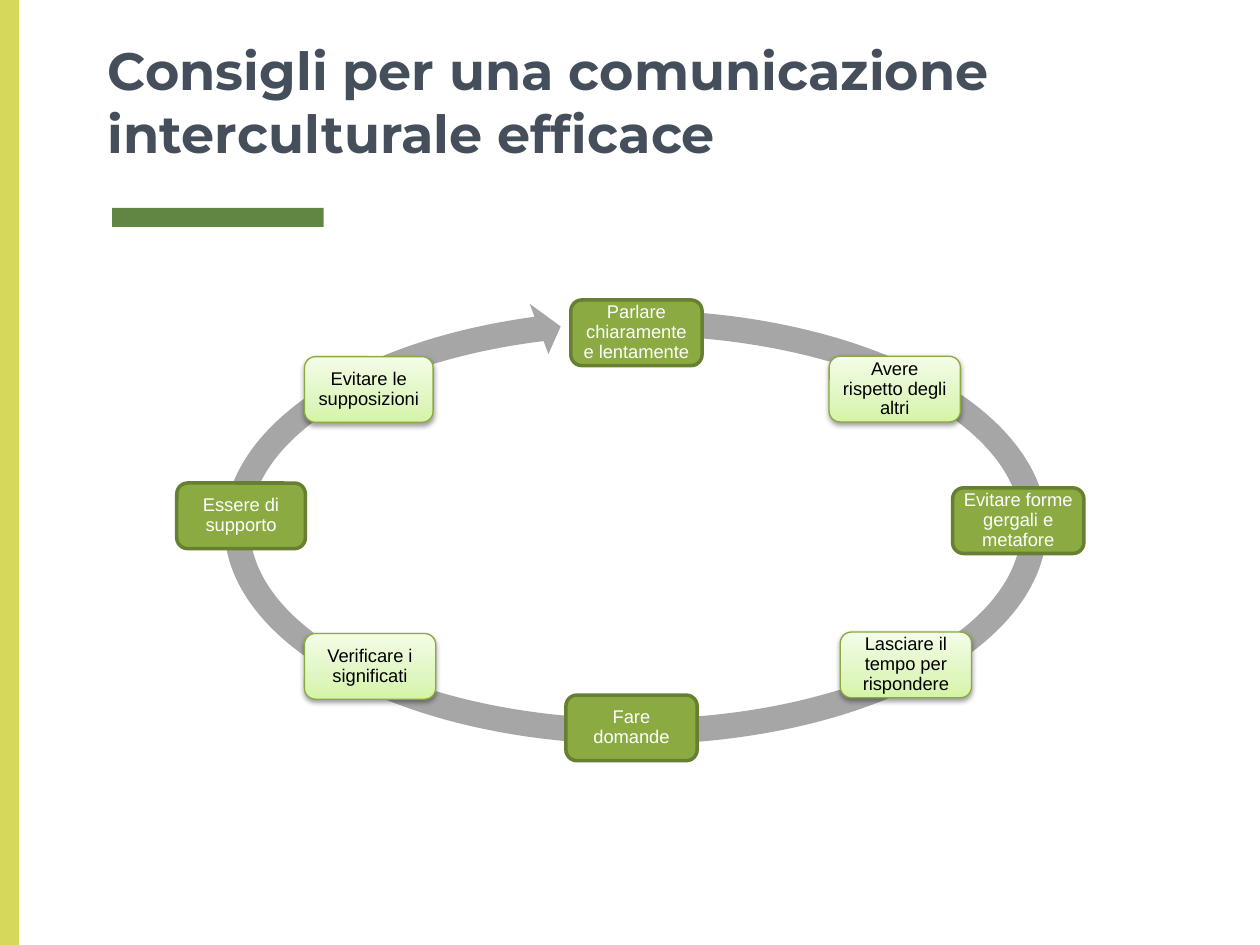
from copy import deepcopy

from pptx import Presentation
from pptx.dml.color import RGBColor
from pptx.enum.shapes import MSO_SHAPE
from pptx.enum.text import MSO_ANCHOR, PP_ALIGN
from pptx.oxml import parse_xml
from pptx.oxml.ns import nsdecls, qn
from pptx.util import Pt

TITLE = "Consigli per una comunicazione\vinterculturale efficace"

# Clockwise from the top: text, left, top, width; every second step is light
STEPS = [
    ("Parlare chiaramente e lentamente", 326.2, 171.4, 75),
    ("Avere rispetto degli altri", 473.8, 203.6, 75),
    ("Evitare forme gergali e metafore", 544.4, 278.8, 75),
    ("Lasciare il tempo per rispondere", 480.2, 361.2, 75),
    ("Fare domande", 323.4, 397.2, 75),
    ("Verificare i significati", 174, 362, 75),
    ("Essere di supporto", 101, 276, 73.5),
    ("Evitare le supposizioni", 174, 203.8, 73.5),
]
STEP_HEIGHT = 37.5
ARROW_ADJUSTMENTS = (0.055, 3.307, 146.423, 168.782, 0.058)

COLORS = {
    "title": "454F5B", "rule": "608643", "side": "D5D85A", "arrow": "A6A6A6",
    "dark": "8BAB42", "dark_line": "677F31", "light_line": "89AA3E",
    "dark_text": "FFFFFF", "light_text": "000000",
}
LIGHT_STOPS = [(0, "D5F4A6"), (0.35, "E0F6C1"), (1, "F3FDE7")]


def rgb(name):
    return RGBColor.from_string(COLORS[name])


def add_shape(kind, x, y, w, h, fill=None, line=None, line_width=0):
    sp = slide.shapes.add_shape(kind, Pt(x), Pt(y), Pt(w), Pt(h))
    sp.shadow.inherit = False
    if fill:
        sp.fill.solid()
        sp.fill.fore_color.rgb = rgb(fill)
    if line:
        sp.line.color.rgb = rgb(line)
        sp.line.width = Pt(line_width)
    else:
        sp.line.fill.background()
    return sp


def style_light(sp):
    """Three-stop gradient, darker at the bottom, and a soft shadow."""
    sp.fill.gradient()
    sp.fill.gradient_angle = 90
    stops = sp._element.spPr.find(".//" + qn("a:gsLst"))
    stops.append(deepcopy(stops[0]))
    for stop, (position, color) in zip(sp.fill.gradient_stops, LIGHT_STOPS):
        stop.position = position
        stop.color.rgb = RGBColor.from_string(color)
    sp._element.spPr.find(qn("a:effectLst")).append(parse_xml(
        f'<a:outerShdw {nsdecls("a")} blurRad="{Pt(3.1)}" dist="{Pt(1.6)}" '
        'dir="5400000" rotWithShape="0"><a:srgbClr val="000000">'
        '<a:alpha val="38000"/></a:srgbClr></a:outerShdw>'))


def add_step(index, text, x, y, w):
    style = "light" if index % 2 else "dark"
    sp = add_shape(MSO_SHAPE.ROUNDED_RECTANGLE, x, y, w, STEP_HEIGHT,
                   "dark", style + "_line", 0.75 if style == "light" else 2)
    if style == "light":
        style_light(sp)
    tf = sp.text_frame
    tf.word_wrap = True
    tf.vertical_anchor = MSO_ANCHOR.MIDDLE
    tf.margin_left = tf.margin_right = tf.margin_top = tf.margin_bottom = Pt(3.6)
    p = tf.paragraphs[0]
    p.text = text
    p.alignment = PP_ALIGN.CENTER
    p.line_spacing = 0.9
    p.space_after = Pt(3.7)
    p.font.name, p.font.size = "Arial", Pt(10.5)
    p.font.color.rgb = rgb(style + "_text")


prs = Presentation()
prs.slide_width, prs.slide_height = Pt(720), Pt(540)
slide = prs.slides.add_slide(prs.slide_layouts[5])

# Side bar and rule under the title
add_shape(MSO_SHAPE.RECTANGLE, 64, 118.8, 121, 10.8, "rule")
add_shape(MSO_SHAPE.RECTANGLE, 0, 0, 10.8, 540, "side")

# Title
title = slide.shapes.title
title.left, title.top, title.width, title.height = Pt(54.4), Pt(0), Pt(611.6), Pt(101.2)
tf = title.text_frame
tf.word_wrap = True
tf.vertical_anchor = MSO_ANCHOR.BOTTOM
tf.margin_left = tf.margin_right = tf.margin_top = tf.margin_bottom = Pt(7.2)
p = tf.paragraphs[0]
p.text = TITLE
p.alignment = PP_ALIGN.LEFT
p.font.name, p.font.size, p.font.bold = "Montserrat", Pt(30), True
p.font.color.rgb = rgb("title")

# Cycle arrow
arrow = add_shape(MSO_SHAPE.CIRCULAR_ARROW, 120.2, 169.2, 486, 264.2, "arrow")
for i, value in enumerate(ARROW_ADJUSTMENTS):
    arrow.adjustments[i] = value

# Steps around the cycle
for i, step in enumerate(STEPS):
    add_step(i, *step)

prs.save("out.pptx")
